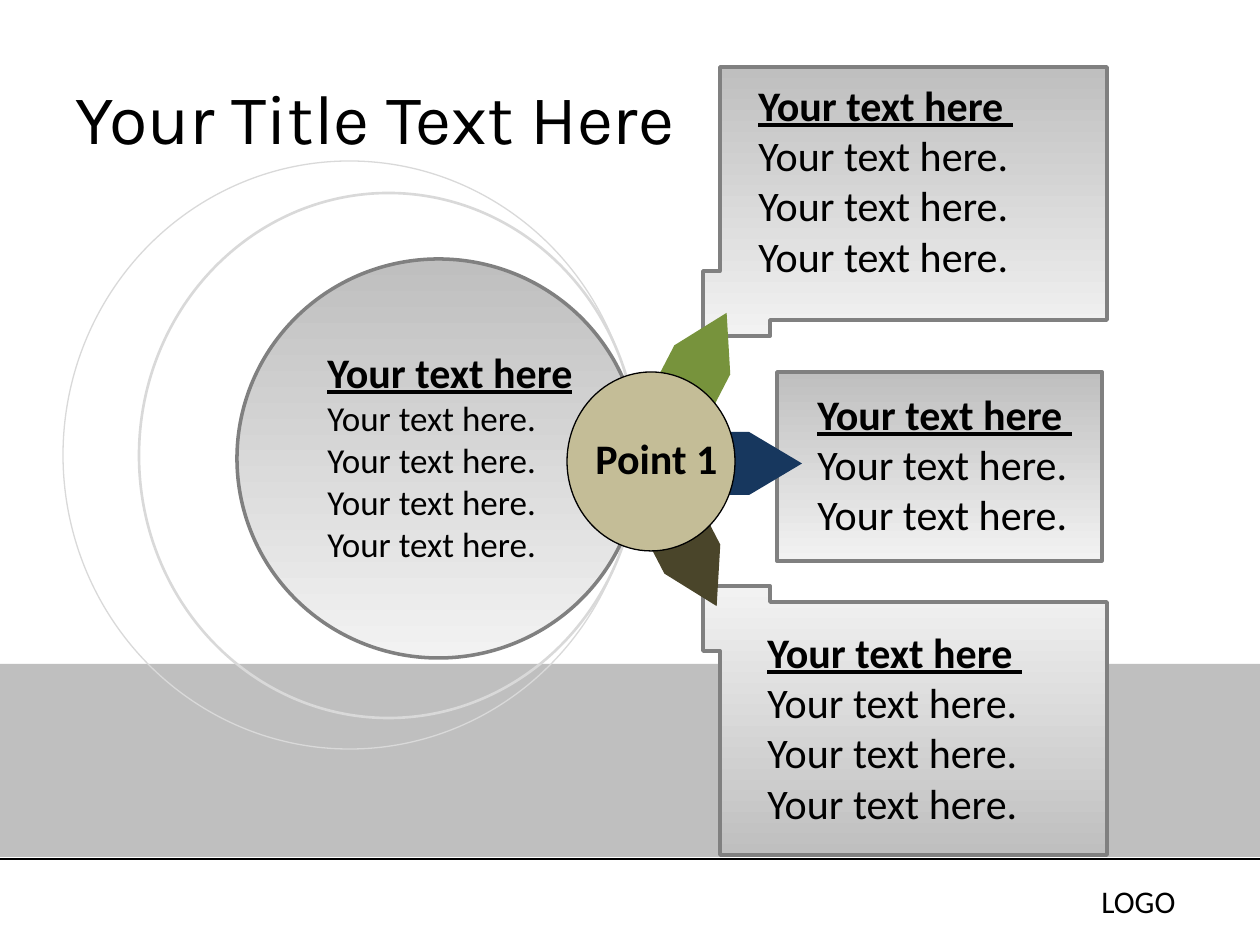
from dataclasses import dataclass

from pptx import Presentation
from pptx.dml.color import RGBColor
from pptx.enum.shapes import MSO_CONNECTOR, MSO_SHAPE
from pptx.enum.text import MSO_ANCHOR, MSO_AUTO_SIZE, PP_ALIGN
from pptx.oxml.ns import qn
from pptx.util import Pt


@dataclass(frozen=True)
class Theme:
    ink: str = "000000"
    band: str = "BFBFBF"
    ring: str = "D9D9D9"
    edge: str = "808080"
    shade: tuple = ("BFBFBF", "F2F2F2")
    hub: str = "C4BD97"
    green: str = "77933C"
    navy: str = "17375E"
    brown: str = "4A452A"
    title_font: str = "Karla"
    text_font: str = "Calibri"
    title_size: int = 40
    heading_size: int = 24
    detail_size: int = 20
    logo_size: int = 18


THEME = Theme()
PX = 914400 / 126
DOWN, UP = 270, 90

TITLE = "Your Title Text Here"
SENTENCE = "Your text here."
NOTES = [
    ((315, 340, 273, 233), "Your text here", 4, THEME.detail_size),
    ((746, 73, 347, 217), "Your text here ", 3, THEME.heading_size),
    ((755, 620, 347, 217), "Your text here ", 3, THEME.heading_size),
    ((805, 382, 305, 165), "Your text here ", 2, THEME.heading_size),
]
LABELS = [
    ((567, 426, 179, 63), "Point 1", THEME.heading_size, True, PP_ALIGN.CENTER),
    ((1089, 876, 140, 50), "LOGO", THEME.logo_size, False, PP_ALIGN.LEFT),
]
RINGS = [((63, 161, 573, 588), 0.75), ((139, 193, 499, 525), 1.5)]
ARROWS = [
    ((640, 528), 62.6, THEME.brown),
    ((650, 328), 297.4, THEME.green),
    ((697, 432), 0, THEME.navy),
]
ARROW_SIZE = (105, 63)
TOP_CALLOUT = [(703, 336), (703, 271), (720, 271), (720, 67),
               (1107, 67), (1107, 320), (770, 320), (770, 336)]
MIRROR_SUM = 922


def emu(*lengths):
    return [round(length * PX) for length in lengths]


def paint(part, fill=None, line=None, width=0, angle=DOWN):
    part.shadow.inherit = False
    if fill is None:
        part.fill.background()
    elif isinstance(fill, tuple):
        part.fill.gradient()
        part.fill.gradient_angle = angle
        for stop, color in zip(part.fill.gradient_stops, fill):
            stop.color.rgb = RGBColor.from_string(color)
    else:
        part.fill.solid()
        part.fill.fore_color.rgb = RGBColor.from_string(fill)
    if line is None:
        part.line.fill.background()
    else:
        part.line.color.rgb = RGBColor.from_string(line)
        part.line.width = Pt(width)
    return part


def add_part(slide, kind, box, **look):
    return paint(slide.shapes.add_shape(kind, *emu(*box)), **look)


def add_callout(slide, outline, angle):
    builder = slide.shapes.build_freeform(*outline[0], scale=PX)
    builder.add_line_segments(outline[1:], close=True)
    paint(builder.convert_to_shape(), THEME.shade, THEME.edge, 2, angle)


def add_run(paragraph, wording, size, font=THEME.text_font, bold=False, underline=False):
    run = paragraph.add_run()
    run.text = wording
    run.font.name = font
    run.font.size = Pt(size)
    run.font.bold = bold
    run.font.underline = underline
    run.font.color.rgb = RGBColor.from_string(THEME.ink)


def add_frame(slide, box):
    frame = slide.shapes.add_textbox(*emu(*box)).text_frame
    frame.word_wrap = True
    frame.auto_size = MSO_AUTO_SIZE.SHAPE_TO_FIT_TEXT
    return frame


def add_title(slide):
    title = slide.shapes.title
    title.left, title.top, title.width, title.height = emu(63, 38, 1134, 157)
    title.text_frame.vertical_anchor = MSO_ANCHOR.MIDDLE
    heading = title.text_frame.paragraphs[0]
    heading.alignment = PP_ALIGN.LEFT
    add_run(heading, TITLE, THEME.title_size, THEME.title_font)


def add_footer_rule(slide):
    rule = slide.shapes.add_connector(MSO_CONNECTOR.STRAIGHT, *emu(0, 859, 1260, 859))
    rule.line.color.rgb = RGBColor.from_string(THEME.ink)
    rule.line.width = Pt(0.75)
    properties = rule._element.spPr
    properties.append(properties.makeelement(qn("a:effectLst"), {}))


def add_diagram(slide):
    add_part(slide, MSO_SHAPE.RECTANGLE, (0, 664, 1260, 193), fill=THEME.band)
    for box, width in RINGS:
        add_part(slide, MSO_SHAPE.OVAL, box, line=THEME.ring, width=width)
    add_part(slide, MSO_SHAPE.RECTANGLE, (777, 372, 325, 189),
             fill=THEME.shade, line=THEME.edge, width=2)
    add_callout(slide, [(x, MIRROR_SUM - y) for x, y in TOP_CALLOUT], UP)
    add_callout(slide, TOP_CALLOUT, DOWN)
    add_part(slide, MSO_SHAPE.OVAL, (237, 259, 403, 399),
             fill=THEME.shade, line=THEME.edge, width=2)
    for corner, rotation, color in ARROWS:
        arrow = add_part(slide, MSO_SHAPE.PENTAGON, corner + ARROW_SIZE, fill=color)
        arrow.adjustments[0] = 0.84
        arrow.rotation = rotation
    add_part(slide, MSO_SHAPE.OVAL, (567, 372, 168, 179), fill=THEME.hub, line=THEME.ink)


def add_wording(slide):
    for box, heading, count, size in NOTES:
        frame = add_frame(slide, box)
        add_run(frame.paragraphs[0], heading, THEME.heading_size, bold=True, underline=True)
        add_run(frame.add_paragraph(), " ".join([SENTENCE] * count), size)
    for box, wording, size, bold, alignment in LABELS:
        label = add_frame(slide, box).paragraphs[0]
        label.alignment = alignment
        add_run(label, wording, size, bold=bold)


def main():
    deck = Presentation()
    deck.slide_width, deck.slide_height = emu(1260, 945)
    slide = deck.slides.add_slide(deck.slide_layouts[5])
    add_title(slide)
    add_footer_rule(slide)
    add_diagram(slide)
    add_wording(slide)
    deck.save("out.pptx")


if __name__ == "__main__":
    main()
